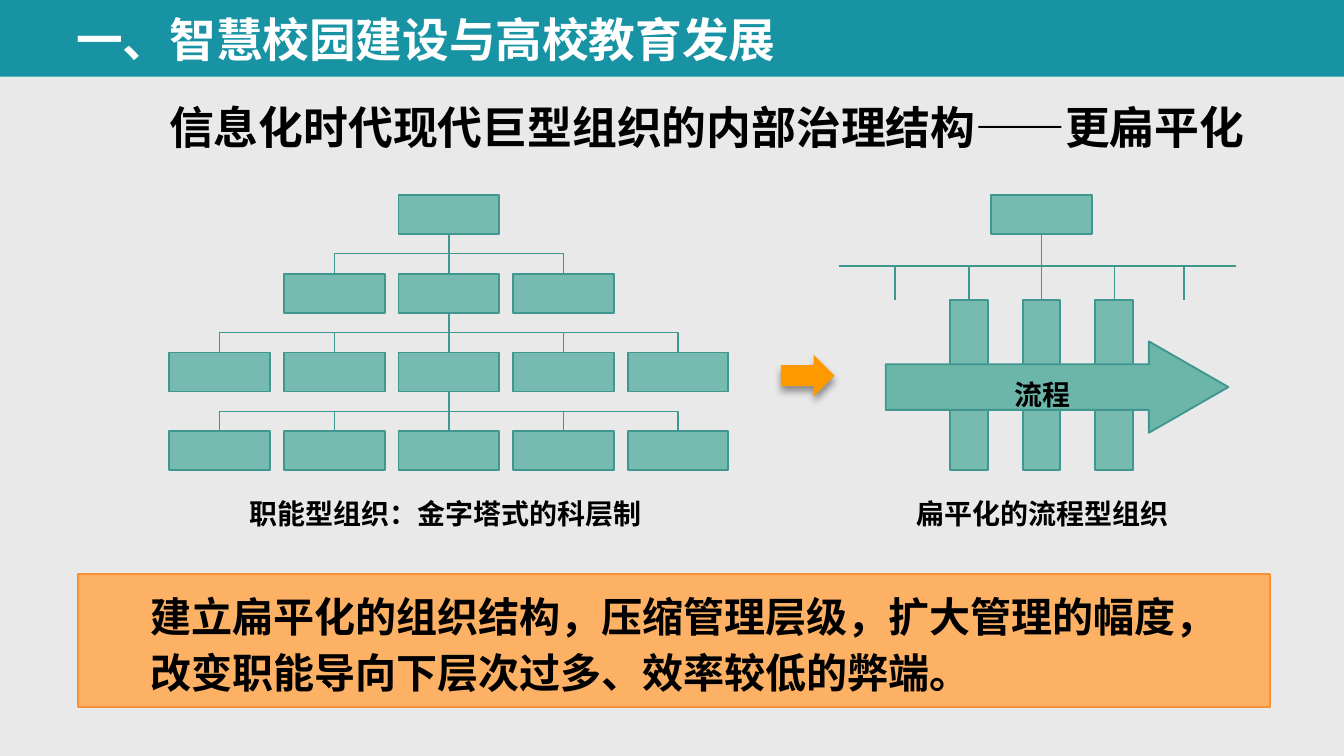
from lxml import etree
from pptx import Presentation
from pptx.dml.color import RGBColor
from pptx.enum.shapes import MSO_CONNECTOR, MSO_SHAPE
from pptx.enum.text import PP_ALIGN
from pptx.oxml.ns import qn
from pptx.util import Pt

RECT, ARROW = MSO_SHAPE.RECTANGLE, MSO_SHAPE.RIGHT_ARROW
ELBOW, STRAIGHT = MSO_CONNECTOR.ELBOW, MSO_CONNECTOR.STRAIGHT
LEFT, CENTER, JUSTIFY = PP_ALIGN.LEFT, PP_ALIGN.CENTER, PP_ALIGN.JUSTIFY
FONT = "Noto Sans CJK SC"
TEAL, TEAL_EDGE = "6BB5A9", "3F978F"
NODE_W, NODE_H = 75, 29


def px(n):
    """Convert px, 100 to the inch, to EMU."""
    return round(n * 9144)


def color(target, value):
    """Set a colour format to a hex string."""
    target.rgb = RGBColor.from_string(value)


def add_block(shapes, kind, x, y, w, h, fill, edge=None, alpha=100):
    """Add a filled preset shape without a shadow."""
    sp = shapes.add_shape(kind, px(x), px(y), px(w), px(h))
    sp.shadow.inherit = False
    sp.fill.solid()
    color(sp.fill.fore_color, fill)
    if alpha < 100:
        clr = sp._element.spPr.find(qn("a:solidFill"))[0]
        etree.SubElement(clr, qn("a:alpha"), val=str(alpha * 1000))
    if edge:
        color(sp.line.color, edge)
        sp.line.width = Pt(1)
    else:
        sp.line.fill.background()
    return sp


def add_node(shapes, x, y, w=NODE_W, h=NODE_H):
    """Add one organisation box."""
    return add_block(shapes, RECT, x, y, w, h, TEAL, TEAL_EDGE, 90)


def add_text(shapes, x, y, w, h, lines, size, fill="000000", align=LEFT):
    """Add a bold text box with one paragraph per line."""
    tf = shapes.add_textbox(px(x), px(y), px(w), px(h)).text_frame
    tf.word_wrap = True
    for i, line in enumerate(lines):
        p = tf.add_paragraph() if i else tf.paragraphs[0]
        p.alignment = align
        p.line_spacing = Pt(30)
        r = p.add_run()
        r.text = line
        r.font.size, r.font.bold, r.font.name = Pt(size), True, FONT
        color(r.font.color, fill)
        etree.SubElement(r._r.get_or_add_rPr(), qn("a:ea"), typeface=FONT)


def add_line(shapes, kind, x1, y1, x2, y2):
    """Add a thin connector without a shadow."""
    c = shapes.add_connector(kind, px(x1), px(y1), px(x2), px(y2))
    color(c.line.color, TEAL_EDGE)
    c.line.width = Pt(0.75)
    etree.SubElement(c._element.spPr, qn("a:effectLst"))
    return c


def add_branch(shapes, x1, y1, x2, y2):
    """Join a child at (x1, y1) to the parent above it by a vertical elbow."""
    cx, cy = (x1 + x2) / 2, (y1 + y2) / 2
    side = 1 if x1 <= x2 else -1
    run, rise = side * (y1 - y2) / 2, abs(x1 - x2) / 2
    c = add_line(shapes, ELBOW, cx + run, cy + rise, cx - run, cy - rise)
    c._element.spPr.xfrm.set("rot", str(60000 * (90 if side > 0 else 270)))


def add_pyramid(s, x, y, w, h):
    """Draw the layered hierarchy and its caption."""
    shapes = s.shapes.add_group_shape().shapes
    pitch, mid = (w - NODE_W) / 4, x + w / 2
    counts = (1, 3, 5, 5)
    tops = [y + (h - NODE_H) * i / 3 for i in range(4)]
    rows = [[mid + pitch * (i - (n - 1) / 2) for i in range(n)] for n in counts]
    for row, top in zip(rows, tops):
        for cx in row:
            add_node(shapes, cx - NODE_W / 2, top)
    for row, top, upper in zip(rows[1:], tops[1:], tops):
        for cx in row:
            add_branch(shapes, cx, top, mid, upper + NODE_H)
    add_text(shapes, x + 50, y + h - 2, 317, 54, ["职能型组织：金字塔式的科层制"], 15)


def add_flat(s, x, y, w, h):
    """Draw the flat process organisation and its caption."""
    shapes = s.shapes.add_group_shape().shapes
    mid, bar_w, bar_top = x + 158, 28, y + 78
    add_node(shapes, mid - NODE_W / 2, y)
    for i in (-1, 0, 1):
        add_node(shapes, mid + 54 * i - bar_w / 2, bar_top, bar_w, y + h - bar_top)
    sp = add_block(shapes, ARROW, x + 42, y + 109, 255, 68, TEAL, TEAL_EDGE)
    sp.adjustments[0], sp.adjustments[1] = 0.5, 0.87
    for dx in (-54, 0, 54, -109, 106):
        add_branch(shapes, mid + dx, bar_top, mid, y + NODE_H)
    add_line(shapes, STRAIGHT, x + 7, y + 53, x + 303, y + 53)
    add_text(shapes, x + 128, y + 114, 72, 54, ["流程"], 15)
    add_text(shapes, x, y + h - 2, w, 54, ["扁平化的流程型组织"], 15, align=CENTER)


def add_transition(s, x, y, w, h):
    """Draw the shadowed arrow between the two structures."""
    sp = add_block(s.shapes, ARROW, x, y, w, h, "FF9900")
    effects = sp._element.spPr.find(qn("a:effectLst"))
    shadow = etree.SubElement(effects, qn("a:outerShdw"), blurRad=str(Pt(4)),
                              dist=str(Pt(3)), dir="5400000", rotWithShape="0")
    clr = etree.SubElement(shadow, qn("a:srgbClr"), val="000000")
    etree.SubElement(clr, qn("a:alpha"), val="40000")


def add_header(s, x, y, w, h):
    """Draw the section bar and the slide title below it."""
    add_block(s.shapes, RECT, x, y, w, h, "1893A4")
    add_text(s.shapes, x + 47, y + 3, 900, 50,
             ["一、智慧校园建设与高校教育发展"], 25, "FFFFFF")
    add_text(s.shapes, x + 116, y + 68, 869, 54,
             ["信息化时代现代巨型组织的内部治理结构——更扁平化"], 24)


def add_conclusion(s, x, y, w, h):
    """Draw the orange conclusion panel."""
    add_block(s.shapes, RECT, x, y, w, h, "FFAB57", "F89134", 90)
    add_text(s.shapes, x + 44, y + 3, 821, 54,
             ["建立扁平化的组织结构，压缩管理层级，扩大管理的幅度，",
              "改变职能导向下层次过多、效率较低的弊端。"], 22, align=JUSTIFY)


def main():
    """Build and save the slide."""
    prs = Presentation()
    prs.slide_width = px(1000)
    prs.slide_height = prs.slide_width * 9 // 16
    s = prs.slides.add_slide(prs.slide_layouts[6])
    s.background.fill.solid()
    color(s.background.fill.fore_color, "E9E9E9")
    add_header(s, 0, 0, 1000, 57)
    add_pyramid(s, 126, 145, 416, 205)
    add_flat(s, 617, 145, 317, 205)
    add_transition(s, 581, 264, 40, 31)
    add_conclusion(s, 58, 427, 887, 99)
    prs.save("out.pptx")


if __name__ == "__main__":
    main()
